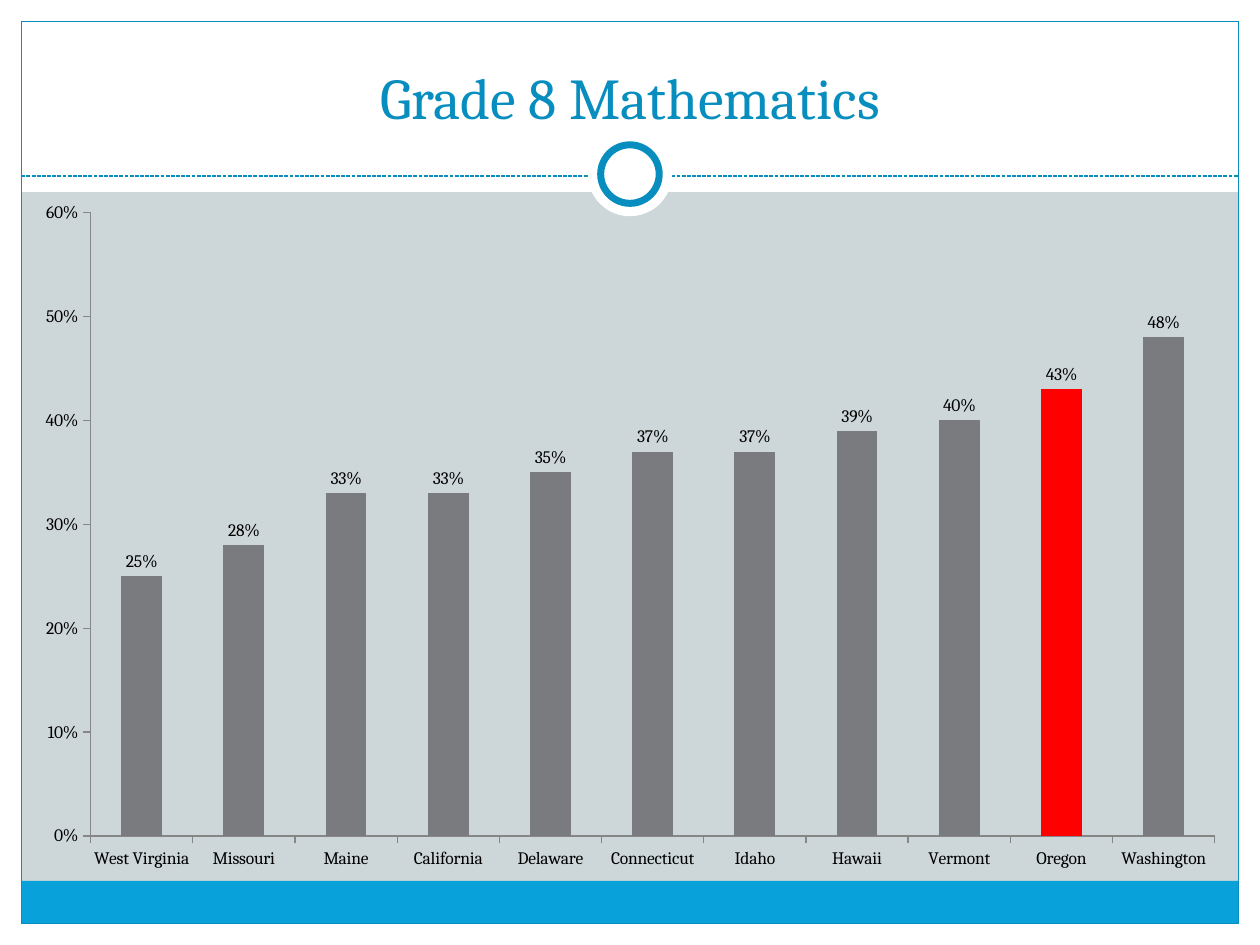
from dataclasses import dataclass

from lxml.etree import SubElement
from pptx import Presentation
from pptx.chart.data import CategoryChartData
from pptx.dml.color import RGBColor
from pptx.enum.chart import XL_CHART_TYPE, XL_LABEL_POSITION, XL_TICK_MARK
from pptx.enum.dml import MSO_LINE
from pptx.enum.shapes import MSO_CONNECTOR, MSO_SHAPE
from pptx.enum.text import MSO_ANCHOR, MSO_AUTO_SIZE, PP_ALIGN
from pptx.oxml import parse_xml
from pptx.oxml.ns import nsdecls, qn
from pptx.util import Cm, Pt


@dataclass(frozen=True)
class Theme:
    font: str = "Cambria"
    title_size: float = 33
    chart_size: float = 10
    background: RGBColor = RGBColor.from_string("CDD7D9")
    white: RGBColor = RGBColor.from_string("FFFFFF")
    black: RGBColor = RGBColor.from_string("000000")
    footer: RGBColor = RGBColor.from_string("08A1D9")
    accent: RGBColor = RGBColor.from_string("078EBF")
    bar: RGBColor = RGBColor.from_string("797B7E")
    highlight: RGBColor = RGBColor.from_string("FF0000")
    axis: RGBColor = RGBColor.from_string("868686")


class SlideBuilder:
    def __init__(self, page, theme):
        self.page = page
        self.theme = theme
        page.background.fill.solid()
        page.background.fill.fore_color.rgb = theme.background

    def shape(self, kind, left, top, width, height, fill=None, line_width=0):
        shape = self.page.shapes.add_shape(kind, Cm(left), Cm(top), Cm(width), Cm(height))
        shape.shadow.inherit = False
        if fill is None:
            shape.fill.background()
        else:
            shape.fill.solid()
            shape.fill.fore_color.rgb = fill
        if line_width:
            shape.line.color.rgb = self.theme.accent
            shape.line.width = Pt(line_width)
        else:
            shape.line.fill.background()

    def circle(self, center_x, center_y, size, line_width=0):
        self.shape(MSO_SHAPE.OVAL, center_x - size / 2, center_y - size / 2,
                   size, size, self.theme.white, line_width)

    def dashed_rule(self, left, right, y):
        rule = self.page.shapes.add_connector(
            MSO_CONNECTOR.STRAIGHT, Cm(left), Cm(y), Cm(right), Cm(y))
        rule.line.color.rgb = self.theme.accent
        rule.line.width = Pt(0.75)
        rule.line.dash_style = MSO_LINE.SQUARE_DOT
        SubElement(rule.element.spPr, qn("a:effectLst"))

    def title(self, text, left, top, width, height):
        title = self.page.shapes.title
        title.left, title.top, title.width, title.height = map(Cm, (left, top, width, height))
        box = title.text_frame
        box.text = text
        box.word_wrap = True
        box.auto_size = MSO_AUTO_SIZE.NONE
        box.vertical_anchor = MSO_ANCHOR.BOTTOM
        para = box.paragraphs[0]
        para.alignment = PP_ALIGN.CENTER
        self.style_font(para.font, self.theme.title_size, self.theme.accent)
        title.element.getparent().append(title.element)

    def style_font(self, font, size, color):
        font.name = self.theme.font
        font.size = Pt(size)
        font.color.rgb = color

    def column_chart(self, shares, highlighted, left, top, width, height):
        data = CategoryChartData(number_format="0%")
        data.categories = list(shares)
        data.add_series("Series 1", list(shares.values()))
        chart = self.page.shapes.add_chart(
            XL_CHART_TYPE.COLUMN_CLUSTERED, Cm(left), Cm(top), Cm(width), Cm(height), data).chart
        chart.has_legend = False
        chart.has_title = False
        self.style_font(chart.font, self.theme.chart_size, self.theme.black)
        chart.element.find(qn("c:txPr")).addprevious(parse_xml(
            f'<c:spPr {nsdecls("c", "a")}><a:noFill/><a:ln><a:noFill/></a:ln></c:spPr>'))

        for axis in (chart.category_axis, chart.value_axis):
            axis.has_major_gridlines = False
            axis.major_tick_mark = XL_TICK_MARK.OUTSIDE
            axis.minor_tick_mark = XL_TICK_MARK.NONE
            axis.format.line.color.rgb = self.theme.axis
            axis.format.line.width = Pt(0.75)
        values = chart.value_axis
        values.minimum_scale, values.maximum_scale, values.major_unit = 0, 0.6, 0.1
        values.tick_labels.number_format = "0%"
        values.tick_labels.number_format_is_linked = False

        plot = chart.plots[0]
        plot.gap_width = 150
        plot.vary_by_categories = False
        plot.has_data_labels = True
        labels = plot.data_labels
        labels.show_value = True
        labels.number_format = "0%"
        labels.number_format_is_linked = False
        labels.position = XL_LABEL_POSITION.OUTSIDE_END
        series = plot.series[0]
        point = series.points[list(shares).index(highlighted)]
        for item, color in ((series, self.theme.bar), (point, self.theme.highlight)):
            item.format.fill.solid()
            item.format.fill.fore_color.rgb = color


def main():
    width, height, margin = 25.4, 19.05, 0.43
    inner_width = width - 2 * margin
    shares = {
        "West Virginia": 0.25, "Missouri": 0.28, "Maine": 0.33, "California": 0.33,
        "Delaware": 0.35, "Connecticut": 0.37, "Idaho": 0.37, "Hawaii": 0.39,
        "Vermont": 0.40, "Oregon": 0.43, "Washington": 0.48,
    }
    theme = Theme()
    deck = Presentation()
    deck.slide_width, deck.slide_height = Cm(width), Cm(height)
    builder = SlideBuilder(deck.slides.add_slide(deck.slide_layouts[5]), theme)

    borders = (
        (0, height - margin, width, margin),
        (0, 0, width, 3.87),
        (0, 0, margin, height),
        (width - margin, 0, margin, height),
    )
    for border in borders:
        builder.shape(MSO_SHAPE.RECTANGLE, *border, fill=theme.white)
    builder.shape(MSO_SHAPE.RECTANGLE, margin, 17.76, inner_width, 0.86, fill=theme.footer)
    builder.shape(MSO_SHAPE.RECTANGLE, margin, margin, inner_width,
                  height - 2 * margin, line_width=0.75)
    builder.dashed_rule(margin, width - margin, 3.55)
    builder.circle(width / 2, 3.51, 1.7)
    builder.circle(width / 2, 3.51, 1.18, line_width=4)
    builder.title("Grade 8 Mathematics", 0.85, 0.64, 23.7, 2.12)
    builder.column_chart(shares, "Oregon", margin, 3.81, 24.55, 13.97)
    deck.save("out.pptx")


if __name__ == "__main__":
    main()
